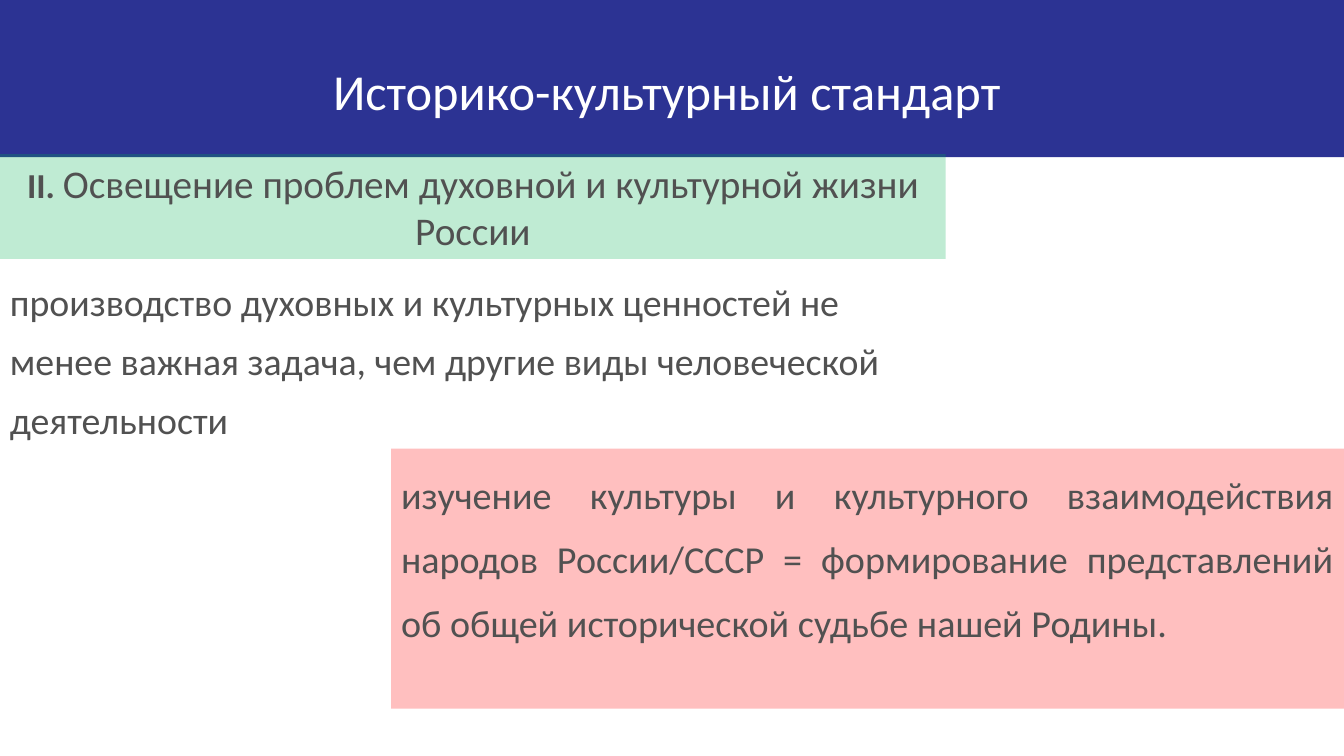
from lxml import etree
from pptx import Presentation
from pptx.dml.color import RGBColor
from pptx.enum.shapes import MSO_SHAPE as Shape
from pptx.enum.text import MSO_ANCHOR as Anchor, PP_ALIGN as Align
from pptx.oxml.ns import qn
from pptx.util import Inches, Pt

WIDTH, HEIGHT = 13.33, 7.5
FONT = "Calibri"
WHITE, GREY, NAVY, GREEN, RED = "FFFFFF", "515151", "2C3393", "00B050", "FF0000"
TINT = 25

HEADER = (0, 0, WIDTH, 1.56)
BLOCKS = [
    {
        "area": (2.06, 0.3, 9.11, 0.95),
        "anchor": Anchor.BOTTOM,
        "align": Align.CENTER,
        "color": WHITE,
        "spans": [("Историко-культурный стандарт", 36, False)],
    },
    {
        "area": (3.88, 4.45, 9.45, 2.58),
        "fill": RED,
        "align": Align.JUSTIFY,
        "spacing": 1.4,
        "spans": [(
            "изучение культуры и культурного взаимодействия народов России/СССР = "
            "формирование представлений об общей исторической судьбе нашей Родины.",
            27.2, False,
        )],
    },
    {
        "area": (0, 1.53, 9.38, 1.04),
        "fill": GREEN,
        "align": Align.CENTER,
        "spans": [
            ("II. ", 25, True),
            ("Освещение проблем духовной и культурной жизни России", 28, False),
        ],
    },
    {
        "area": (0, 2.58, 9.38, 1.87),
        "spacing": 1.3,
        "spans": [(
            "производство духовных и культурных ценностей не менее важная задача, "
            "чем другие виды человеческой деятельности",
            27, False,
        )],
    },
]


def paint(target, color):
    target.rgb = RGBColor.from_string(color)


def add_panel(page, area, color, opacity=100):
    panel = page.shapes.add_shape(Shape.RECTANGLE, *map(Inches, area))
    panel.shadow.inherit = False
    panel.line.fill.background()
    panel.fill.solid()
    paint(panel.fill.fore_color, color)
    if opacity < 100:
        tone = next(panel.fill._xPr.iter(qn("a:srgbClr")))
        etree.SubElement(tone, qn("a:alpha")).set("val", str(opacity * 1000))
    return panel


def add_block(page, block):
    if "fill" in block:
        box = add_panel(page, block["area"], block["fill"], TINT)
    else:
        box = page.shapes.add_textbox(*map(Inches, block["area"]))
    frame = box.text_frame
    frame.word_wrap = True
    frame.vertical_anchor = block.get("anchor", Anchor.TOP)
    para = frame.paragraphs[0]
    para.alignment = block.get("align", Align.LEFT)
    para.line_spacing = block.get("spacing", 1.0)
    for text, size, bold in block["spans"]:
        span = para.add_run()
        span.text = text
        span.font.name = FONT
        span.font.size = Pt(size)
        span.font.bold = bold
        paint(span.font.color, block.get("color", GREY))


def main():
    deck = Presentation()
    deck.slide_width, deck.slide_height = Inches(WIDTH), Inches(HEIGHT)
    page = deck.slides.add_slide(deck.slide_layouts[6])
    add_panel(page, HEADER, NAVY)
    for block in BLOCKS:
        add_block(page, block)
    deck.save("out.pptx")


if __name__ == "__main__":
    main()
